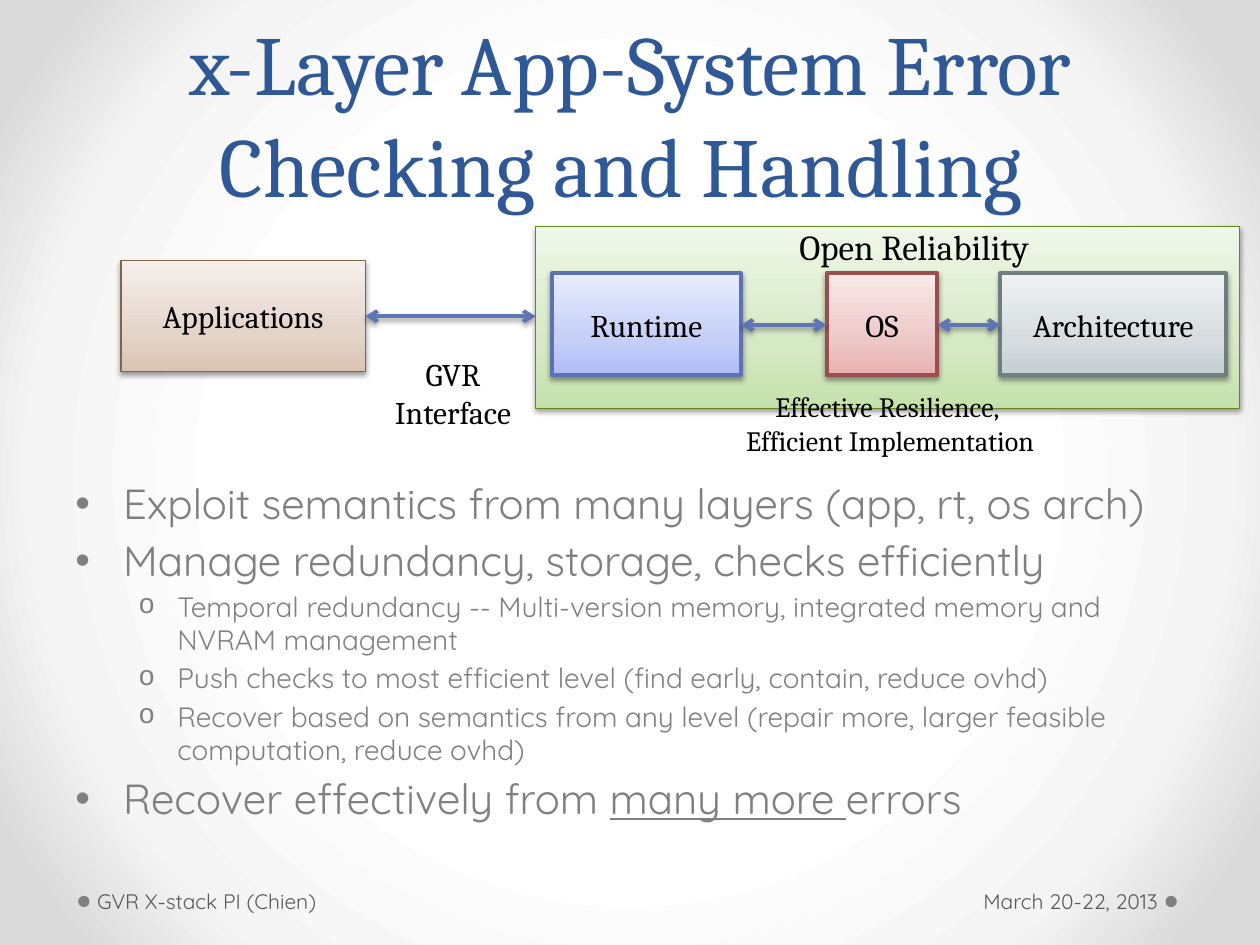
from lxml import etree
from pptx import Presentation
from pptx.dml.color import RGBColor
from pptx.enum.shapes import MSO_CONNECTOR, MSO_SHAPE
from pptx.enum.text import MSO_ANCHOR, PP_ALIGN
from pptx.oxml.ns import qn
from pptx.util import Inches, Pt

LEFT, CENTER, RIGHT = PP_ALIGN.LEFT, PP_ALIGN.CENTER, PP_ALIGN.RIGHT
TOP, MIDDLE, BOTTOM = MSO_ANCHOR.TOP, MSO_ANCHOR.MIDDLE, MSO_ANCHOR.BOTTOM
RECTANGLE, OVAL = MSO_SHAPE.RECTANGLE, MSO_SHAPE.OVAL
STRAIGHT = MSO_CONNECTOR.STRAIGHT

SERIF, SANS = "Cambria", "Quicksand"
BLACK, GRAY, DARK_GRAY = "000000", "808080", "595959"
TITLE_BLUE, ARROW_BLUE = "2F5897", "6076B4"
BULLETS = {0: ("•", "Arial", 24, 0.38, 0.38), 1: ("o", "Courier New", 16, 0.81, 0.31)}
POINTS = [
    (0, ["Exploit semantics from many layers (app, rt, os arch)"]),
    (0, ["Manage redundancy, storage, checks efficiently"]),
    (1, ["Temporal redundancy -- Multi-version memory, integrated memory and NVRAM management"]),
    (1, ["Push checks to most efficient level (find early, contain, reduce ovhd)"]),
    (1, ["Recover based on semantics from any level (repair more, larger feasible computation, reduce ovhd)"]),
    (0, ["Recover effectively from ", "many more ", "errors"]),
]
SYSTEM_LAYERS = [
    ("Runtime", 0.13, 1.5, ("ADBBF6", "C5CFF8", "E8ECFD"), "5C72B2"),
    ("OS", 2.31, 0.88, ("E8B0B0", "EDC8C8", "F9E9E9"), "9A4E4E"),
    ("Architecture", 3.69, 1.79, ("C5CED2", "D6DCDF", "EFF2F3"), "727D82"),
]


def color(value):
    return RGBColor.from_string(value)


def add_child(parent, tag, **attributes):
    child = etree.SubElement(parent, qn(tag))
    for name, value in attributes.items():
        child.set(name, str(value))
    return child


def set_gradient(properties, stops, angle=None):
    gradient = etree.Element(qn("a:gradFill"), rotWithShape="1")
    stop_list = add_child(gradient, "a:gsLst")
    for position, value in stops:
        stop = add_child(stop_list, "a:gs", pos=position * 1000)
        add_child(stop, "a:srgbClr", val=value)
    if angle is None:
        circle = add_child(gradient, "a:path", path="circle")
        add_child(circle, "a:fillToRect", l=50000, t=50000, r=50000, b=50000)
    else:
        add_child(gradient, "a:lin", ang=angle * 60000, scaled=0)
    properties.replace(properties.find(qn("a:solidFill")), gradient)


def add_shadow(effects):
    shadow = add_child(effects, "a:outerShdw", blurRad=Pt(3.1), dist=Pt(1.6),
                       dir=90 * 60000, rotWithShape=0)
    shade = add_child(shadow, "a:srgbClr", val=BLACK)
    add_child(shade, "a:alpha", val=38000)


def format_runs(para, size, font, value):
    for span in para.runs:
        span.font.size = Pt(size)
        span.font.name = font
        span.font.color.rgb = color(value)


def write(frame, text, size, font=SERIF, value=BLACK, align=CENTER, anchor=MIDDLE):
    frame.word_wrap = True
    frame.vertical_anchor = anchor
    frame.text = text
    for para in frame.paragraphs:
        para.alignment = align
        format_runs(para, size, font, value)


def add_text(page, box, text, size, **style):
    frame = page.shapes.add_textbox(*map(Inches, box)).text_frame
    write(frame, text, size, **style)
    return frame


def add_block(page, box, colors, outline, width, text=""):
    block = page.shapes.add_shape(RECTANGLE, *map(Inches, box))
    block.fill.solid()
    set_gradient(block.element.spPr, zip((0, 35, 100), colors), 270)
    block.line.color.rgb = color(outline)
    block.line.width = Pt(width)
    block.shadow.inherit = False
    add_shadow(block.element.spPr.find(qn("a:effectLst")))
    if text:
        write(block.text_frame, text, 18)


def add_arrow(page, start, end, y):
    arrow = page.shapes.add_connector(STRAIGHT, *map(Inches, (start, y, end, y)))
    arrow.line.color.rgb = color(ARROW_BLUE)
    arrow.line.width = Pt(2.25)
    outline = arrow.line._get_or_add_ln()
    add_child(outline, "a:headEnd", type="arrow")
    add_child(outline, "a:tailEnd", type="arrow")
    add_shadow(add_child(arrow.element.spPr, "a:effectLst"))


def add_background(page):
    page.background.fill.solid()
    properties = page.element.find(".//" + qn("p:bgPr"))
    set_gradient(properties, [(50, "FFFFFF"), (76, "F4F4F4"), (92, "DADADA")])


def add_title(page, box):
    frame = add_text(page, box, "x-Layer App-System Error Checking and Handling ", 48,
                     value=TITLE_BLUE, anchor=BOTTOM)
    frame.paragraphs[0].line_spacing = Pt(58)


def add_points(page, box):
    frame = page.shapes.add_textbox(*map(Inches, box)).text_frame
    frame.word_wrap = True
    for index, (level, parts) in enumerate(POINTS):
        para = frame.add_paragraph() if index else frame.paragraphs[0]
        symbol, symbol_font, size, margin, hanging = BULLETS[level]
        para.level = level
        para.space_before = Pt(0.16 * size)
        for position, part in enumerate(parts):
            span = para.add_run()
            span.text = part
            span.font.underline = position == 1
        format_runs(para, size, SANS, GRAY)
        properties = para._p.get_or_add_pPr()
        properties.set("marL", str(Inches(margin)))
        properties.set("indent", str(-Inches(hanging)))
        add_child(properties, "a:buFont", typeface=symbol_font)
        add_child(properties, "a:buChar", char=symbol)


def add_application(page, box, system_left):
    left, top, width, height = box
    add_block(page, box, ("DAC4B4", "E4D5CB", "F5EFEB"), "836445", 0.75, "Applications")
    add_arrow(page, left + width, system_left, top + height / 2)
    add_text(page, (2.54, 2.77, 2.11, 0.71), "GVR\nInterface", 18, anchor=TOP)


def add_system(page, box):
    left, top, width, height = box
    add_block(page, box, ("C5E1AB", "D6E9C5", "EFF7E9"), "62891C", 0.75)
    previous_end = None
    for name, offset, layer_width, colors, outline in SYSTEM_LAYERS:
        start = left + offset
        add_block(page, (start, top + 0.37, layer_width, 0.81), colors, outline, 2.25, name)
        if previous_end:
            add_arrow(page, previous_end, start, top + 0.78)
        previous_end = start + layer_width
    add_text(page, (5.41, top - 0.06, 3.69, 0.44), "Open Reliability", 20, anchor=TOP)
    add_text(page, (4.46, top + 1.31, 5.21, 0.5),
             "Effective Resilience, \nEfficient Implementation", 16)


def add_footer(page, box, text, align, dot_left):
    dot = page.shapes.add_shape(OVAL, *map(Inches, (dot_left, 7.11, 0.09, 0.09)))
    dot.fill.solid()
    dot.fill.fore_color.rgb = color(GRAY)
    dot.line.fill.background()
    dot.shadow.inherit = False
    frame = add_text(page, box, text, 12, font=SANS, value=DARK_GRAY, align=align)
    frame.margin_left = Inches(0.05 if align == LEFT else 0.1)
    frame.margin_right = Inches(0.05 if align == RIGHT else 0.1)


def main():
    deck = Presentation()
    deck.slide_width, deck.slide_height = Inches(10), Inches(7.5)
    page = deck.slides.add_slide(deck.slide_layouts[6])
    add_background(page)
    add_title(page, (0.5, 0, 9, 1.75))
    add_points(page, (0.5, 3.74, 9, 3.06))
    add_application(page, (0.96, 2.07, 1.94, 0.88), 4.25)
    add_system(page, (4.25, 1.8, 5.59, 1.44))
    add_footer(page, (0.72, 6.95, 3.11, 0.4), "GVR X-stack PI (Chien)", LEFT, 0.62)
    add_footer(page, (6.96, 6.95, 2.28, 0.4), "March 20-22, 2013", RIGHT, 9.25)
    deck.save("out.pptx")


if __name__ == "__main__":
    main()
